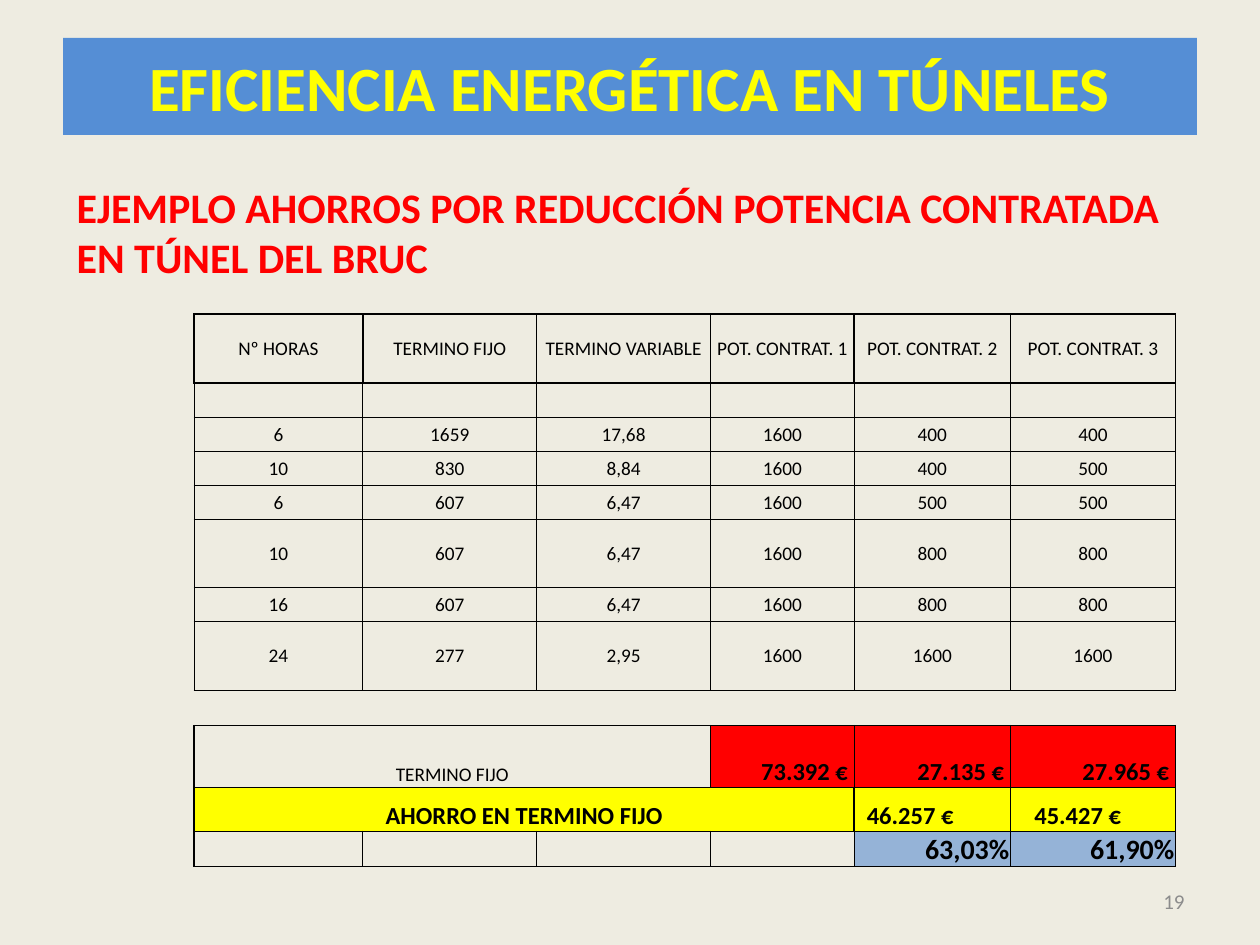
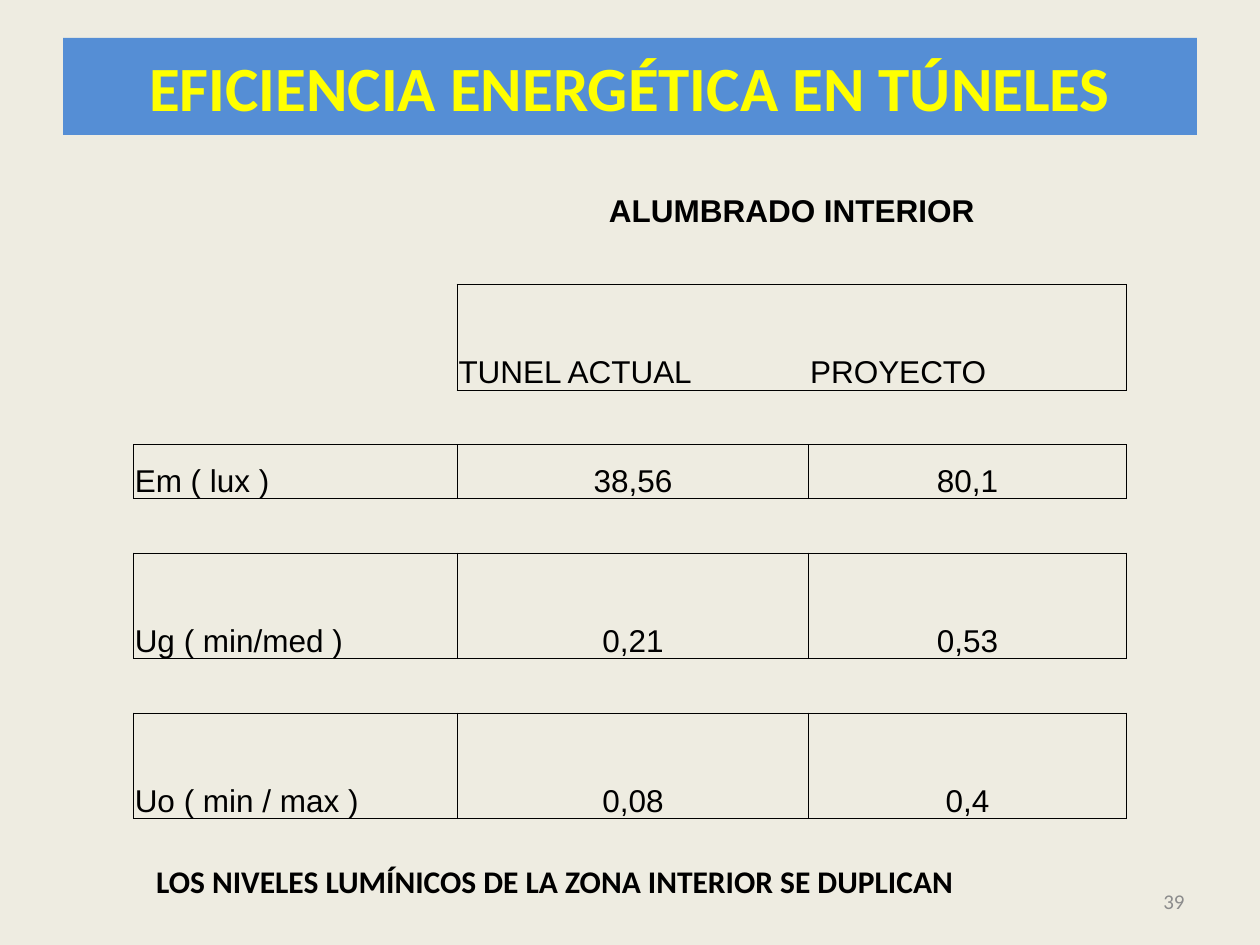
from lxml import etree
from pptx import Presentation
from pptx.dml.color import RGBColor
from pptx.enum import text as enum
from pptx.oxml.ns import qn
from pptx.util import Inches, Pt

TITLE = "EFICIENCIA ENERGÉTICA EN TÚNELES"
PLAIN = "{2D5ABB26-0587-4C30-8999-92F81FD0307C}"  # table style without grid
ALIGN = {"l": enum.PP_ALIGN.LEFT, "c": enum.PP_ALIGN.CENTER, "r": enum.PP_ALIGN.RIGHT}
ANCHOR = {"m": enum.MSO_ANCHOR.MIDDLE, "b": enum.MSO_ANCHOR.BOTTOM, "t": enum.MSO_ANCHOR.TOP}
WIDTH = {"t": 0.5, "T": 1}  # thin and thick cell edges; "-" is none
BLACK, RED, YELLOW = "000000", "FF0000", "FFFF00"
BAND, PALE, GREY, PAPER = "558ED5", "95B3D7", "8C8C8C", "EEECE1"


def paint(fill, color):
    fill.solid()
    fill.fore_color.rgb = RGBColor.from_string(color)


def write(frame, words, size=18, color=BLACK, bold=False, font="Calibri", align="l"):
    para = frame.paragraphs[0]
    para.alignment = ALIGN[align]
    if not words:
        # An empty cell still needs a small size, or its row grows.
        etree.SubElement(para._p, qn("a:endParaRPr"), sz=str(size * 100))
        return
    run = para.add_run()
    run.text = words
    run.font.size, run.font.bold, run.font.name = Pt(size), bold, font
    run.font.color.rgb = RGBColor.from_string(color)


def edge(cell, sides):
    """Draw the cell edges; sides names left, top, right and bottom in turn."""
    props = cell._tc.get_or_add_tcPr()
    kinds = dict(zip("LTRB", sides))
    for side in "LRTB":
        width = WIDTH.get(kinds[side])
        line = etree.SubElement(props, qn(f"a:ln{side}"), w=str(Pt(width or 0)))
        if width:
            solid = etree.SubElement(line, qn("a:solidFill"))
            etree.SubElement(solid, qn("a:srgbClr"), val=BLACK)
        else:
            etree.SubElement(line, qn("a:noFill"))


class Deck:
    def __init__(self):
        self.prs = Presentation()
        self.prs.slide_width, self.prs.slide_height = Inches(10), Inches(7.5)
        paint(self.prs.slide_master.background.fill, PAPER)
        self.slide = None

    def page(self, number):
        """Start a slide with its title band and number."""
        self.slide = self.prs.slides.add_slide(self.prs.slide_layouts[5])
        band = self.slide.shapes.title
        band.left, band.top, band.width, band.height = map(Inches, (0.5, 0.3, 9, 0.77))
        paint(band.fill, BAND)
        band.text_frame.vertical_anchor = ANCHOR["m"]
        write(band.text_frame, TITLE, size=36, color=YELLOW, bold=True, align="c")
        self.label(str(number), (7.17, 6.95, 2.33, 0.4), anchor="m",
                   size=12, color=GREY, align="r")

    def label(self, words, box, anchor="t", **style):
        frame = self.slide.shapes.add_textbox(*map(Inches, box)).text_frame
        frame.word_wrap = True
        frame.vertical_anchor = ANCHOR[anchor]
        write(frame, words, **style)

    def cell(self, cell, words="", sides="tttt", fill=None, anchor="m",
             left=0.01, right=0.01, span=1, **style):
        cell.margin_left, cell.margin_right = Inches(left), Inches(right)
        cell.margin_top, cell.margin_bottom = Inches(0.01), 0
        cell.vertical_anchor = ANCHOR[anchor]
        edge(cell, sides)
        if fill:
            paint(cell.fill, fill)
        else:
            cell.fill.background()
        write(cell.text_frame, words, **style)

    def table(self, spot, cols, rows, **base):
        """Rows are (height, row style, cells); a cell is words or its own style."""
        size = sum(cols), sum(row[0] for row in rows)
        grid = self.slide.shapes.add_table(
            len(rows), len(cols), *map(Inches, (*spot, *size))).table
        grid._tbl.tblPr.find(qn("a:tableStyleId")).text = PLAIN
        grid.first_row = grid.horz_banding = False
        for col, width in zip(grid.columns, cols):
            col.width = Inches(width)
        for y, (height, look, cells) in enumerate(rows):
            grid.rows[y].height = Inches(height)
            for x, item in enumerate(cells):
                item = item if isinstance(item, dict) else {"words": item}
                style = {**base, **look, **item}
                self.cell(grid.cell(y, x), **style)
                if style.get("span", 1) > 1:
                    grid.cell(y, x).merge(grid.cell(y, x + style["span"] - 1))


def savings(deck):
    deck.page(19)
    hours = [
        (0.27, ["6", "1659", "17,68", "1600", "400", "400"]),
        (0.27, ["10", "830", "8,84", "1600", "400", "500"]),
        (0.27, ["6", "607", "6,47", "1600", "500", "500"]),
        (0.54, ["10", "607", "6,47", "1600", "800", "800"]),
        (0.27, ["16", "607", "6,47", "1600", "800", "800"]),
    ]
    inner = {"sides": "-T-T"}
    cost = {"sides": "tTtT", "anchor": "b", "size": 14, "bold": True,
            "fill": RED, "align": "r", "right": 0.05}
    saved = {"anchor": "b", "size": 14, "bold": True, "fill": YELLOW}
    share = {"anchor": "b", "size": 16, "bold": True, "fill": PALE, "align": "r"}
    rows = [
        (0.55, {"sides": "TTTT"}, ["Nº HORAS", "TERMINO FIJO", "TERMINO VARIABLE",
                                   *(f"POT. CONTRAT. {n}" for n in (1, 2, 3))]),
        (0.27, {"sides": "tTtt"}, [""] * 6),
        *((height, {}, cells) for height, cells in hours),
        (0.55, {"sides": "tttT"}, ["24", "277", "2,95", {"words": "1600", "sides": "tttt"},
                                   "1600", "1600"]),
        (0.28, inner, ["", "", "", {"sides": "-t-T"}, "", ""]),
        (0.49, {}, [
            {"words": "TERMINO FIJO", "sides": "TTtT", "anchor": "b", "span": 3},
            inner, inner,
            {**cost, "words": "73.392 €"},
            {**cost, "words": "27.135 €"},
            {**cost, "words": "27.965 €", "sides": "tTTT"}]),
        (0.35, saved, [
            {"words": "AHORRO EN TERMINO FIJO", "sides": "TTTT", "span": 4},
            inner, inner, inner,
            {"words": "46.257 €", "sides": "TTtT", "align": "l", "left": 0.1},
            {"words": "45.427 €", "sides": "tTTT", "align": "l", "left": 0.19}]),
        (0.28, {"sides": "tTtT"}, [
            {"sides": "TTtT"}, "", "", "",
            {**share, "words": "63,03%"},
            {**share, "words": "61,90%", "sides": "tTTT"}]),
    ]
    deck.table((1.54, 2.49), [1.34, 1.38, 1.38, 1.14, 1.24, 1.31], rows,
               size=11, align="c")
    deck.label("EJEMPLO AHORROS POR REDUCCIÓN POTENCIA CONTRATADA EN TÚNEL DEL BRUC",
               (0.51, 1.39, 8.98, 0.91), size=24, color=RED, bold=True)


def lighting(deck):
    deck.page(39)
    gap = (0.43, {"sides": "-t-t"}, [""] * 3)
    levels = [
        (0.43, "Em ( lux )", "38,56", "80,1"),
        (0.84, "Ug ( min/med )", "0,21", "0,53"),
        (0.84, "Uo ( min / max )", "0,08", "0,4"),
    ]
    rows = [
        (0.59, {"sides": "----"}, [
            "", {"words": "ALUMBRADO INTERIOR", "bold": True, "align": "c", "span": 2}, ""]),
        (0.44, {"sides": "---T"}, [{"sides": "----"}, "", ""]),
        (0.84, {}, [{"sides": "--T-"},
                    {"words": "TUNEL ACTUAL", "sides": "TT-T"},
                    {"words": "PROYECTO", "sides": "-TTT"}]),
        (0.43, {"sides": "-T-t"}, [{"sides": "---t"}, "", ""]),
    ]
    for n, (height, name, *values) in enumerate(levels):
        if n:
            rows.append(gap)
        rows.append((height, {}, [name, *({"words": v, "align": "c"} for v in values)]))
    deck.table((1.06, 1.23), [2.57, 2.79, 2.52], rows, font="Arial", anchor="b")
    deck.label("LOS NIVELES LUMÍNICOS DE LA ZONA INTERIOR SE DUPLICAN",
               (1.14, 6.79, 8.19, 0.4), bold=True)


def main():
    deck = Deck()
    savings(deck)
    lighting(deck)
    deck.prs.save("out.pptx")


if __name__ == "__main__":
    main()
